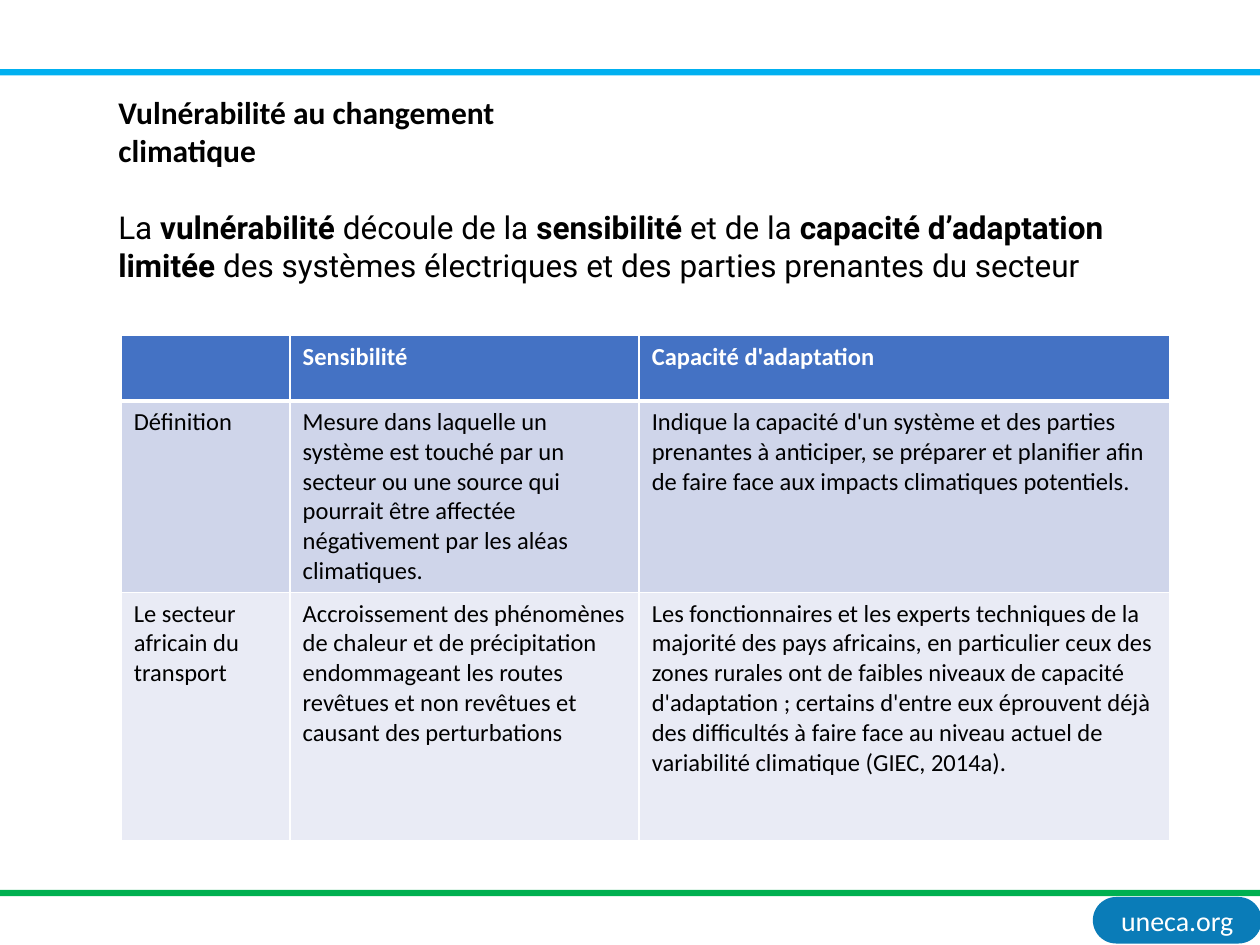
from lxml import etree
from pptx import Presentation
from pptx.dml.color import RGBColor
from pptx.enum import shapes, text
from pptx.oxml import ns
from pptx.util import Pt


def rgb(value):
    return RGBColor.from_string(value)


def add_run(paragraph, words, **font_values):
    run = paragraph.add_run()
    run.text = words
    color = font_values.pop("color", "000000")
    for name, value in font_values.items():
        setattr(run.font, name, value)
    run.font.color.rgb = rgb(color)


presentation = Presentation()
presentation.slide_width, presentation.slide_height = Pt(720), Pt(540)
slide = presentation.slides.add_slide(presentation.slide_layouts[5])

# Bands and web address
rectangle = shapes.MSO_SHAPE.RECTANGLE
pill = shapes.MSO_SHAPE.ROUNDED_RECTANGLE
for kind, left, top, width, height, color, label in [
    (pill, 624.5, 512.6, 96.5, 26.6, "0A7CB8", "uneca.org"),
    (rectangle, 0, 39.5, 720, 3.6, "00B0F0", ""),
    (rectangle, 0, 508.5, 720, 3.6, "00B050", ""),
]:
    shape = slide.shapes.add_shape(kind, Pt(left), Pt(top), Pt(width), Pt(height))
    shape.shadow.inherit = False
    shape.fill.solid()
    shape.fill.fore_color.rgb = rgb(color)
    shape.line.fill.background()
    if label:
        shape.adjustments[0] = 0.5
        frame = shape.text_frame
        for side in ("left", "top", "right", "bottom"):
            setattr(frame, f"margin_{side}", Pt(3.6))
        frame.paragraphs[0].alignment = text.PP_ALIGN.CENTER
        add_run(frame.paragraphs[0], label, name="Calibri", size=Pt(16), color="FFFFFF")

# Title and introduction
title = slide.shapes.title
introduction = slide.shapes.add_textbox(0, 0, 0, 0)
for shape, top, width, height, font_name, runs in [
    (title, 49.7, 251.3, 50, "Calibri", [("Vulnérabilité au changement climatique", True)]),
    (introduction, 115.2, 599, 51, "Roboto", [
        ("La ", False),
        ("vulnérabilité", True),
        (" découle de la ", False),
        ("sensibilité", True),
        (" et de la ", False),
        ("capacité d’adaptation limitée", True),
        (" des systèmes électriques et des parties prenantes du secteur", False),
    ]),
]:
    shape.left, shape.top, shape.width, shape.height = Pt(60.5), Pt(top), Pt(width), Pt(height)
    frame = shape.text_frame
    frame.word_wrap = True
    frame.auto_size = text.MSO_AUTO_SIZE.NONE
    frame.vertical_anchor = text.MSO_ANCHOR.TOP
    paragraph = frame.paragraphs[0]
    paragraph.alignment = text.PP_ALIGN.LEFT
    for words, bold in runs:
        add_run(paragraph, words, name=font_name, size=Pt(18), bold=bold)

# Comparison table: a line break in a cell starts a new paragraph
rows = [
    ["", "Sensibilité", "Capacité d'adaptation"],
    [
        "Définition",
        "Mesure dans laquelle un système est touché par un secteur ou une source qui "
        "pourrait être affectée négativement par les aléas climatiques.",
        "Indique la capacité d'un système et des parties prenantes à anticiper, se préparer "
        "et planifier afin de faire face aux impacts climatiques potentiels.",
    ],
    [
        "Le secteur africain du transport",
        "Accroissement des phénomènes de chaleur et de précipitation endommageant les "
        "routes revêtues et non revêtues et causant des perturbations",
        "Les fonctionnaires et les experts techniques de la majorité des pays africains, en "
        "particulier ceux des zones rurales ont de faibles niveaux de capacité d'adaptation ; "
        "certains d'entre eux éprouvent déjà\n"
        "des difficultés à faire face au niveau actuel de variabilité climatique (GIEC, 2014a).",
    ],
]
column_widths = [96.5, 199.5, 303]
row_heights = [37.4, 108, 141.8]
row_fills = ["4472C4", "CFD5EA", "E9EBF5"]

table = slide.shapes.add_table(
    len(rows), len(column_widths), Pt(69.3), Pt(191.7),
    Pt(sum(column_widths)), Pt(sum(row_heights)),
).table
for column, width in zip(table.columns, column_widths):
    column.width = Pt(width)

for row_index, (row, height, fill) in enumerate(zip(rows, row_heights, row_fills)):
    table.rows[row_index].height = Pt(height)
    is_header = row_index == 0
    for column_index, words in enumerate(row):
        cell = table.cell(row_index, column_index)
        properties = cell._tc.get_or_add_tcPr()
        for side in "LRTB":
            thick = (is_header and side == "B") or (row_index == 1 and side == "T")
            border = etree.SubElement(properties, ns.qn(f"a:ln{side}"), w=str(Pt(3 if thick else 1)))
            solid = etree.SubElement(border, ns.qn("a:solidFill"))
            etree.SubElement(solid, ns.qn("a:srgbClr"), val="FFFFFF")
        cell.fill.solid()
        cell.fill.fore_color.rgb = rgb(fill)
        for index, line in enumerate(words.split("\n")):
            frame = cell.text_frame
            paragraph = frame.add_paragraph() if index else frame.paragraphs[0]
            if line:
                add_run(paragraph, line, name="Calibri", size=Pt(14), bold=is_header,
                        color="FFFFFF" if is_header else "000000")

presentation.save("out.pptx")
